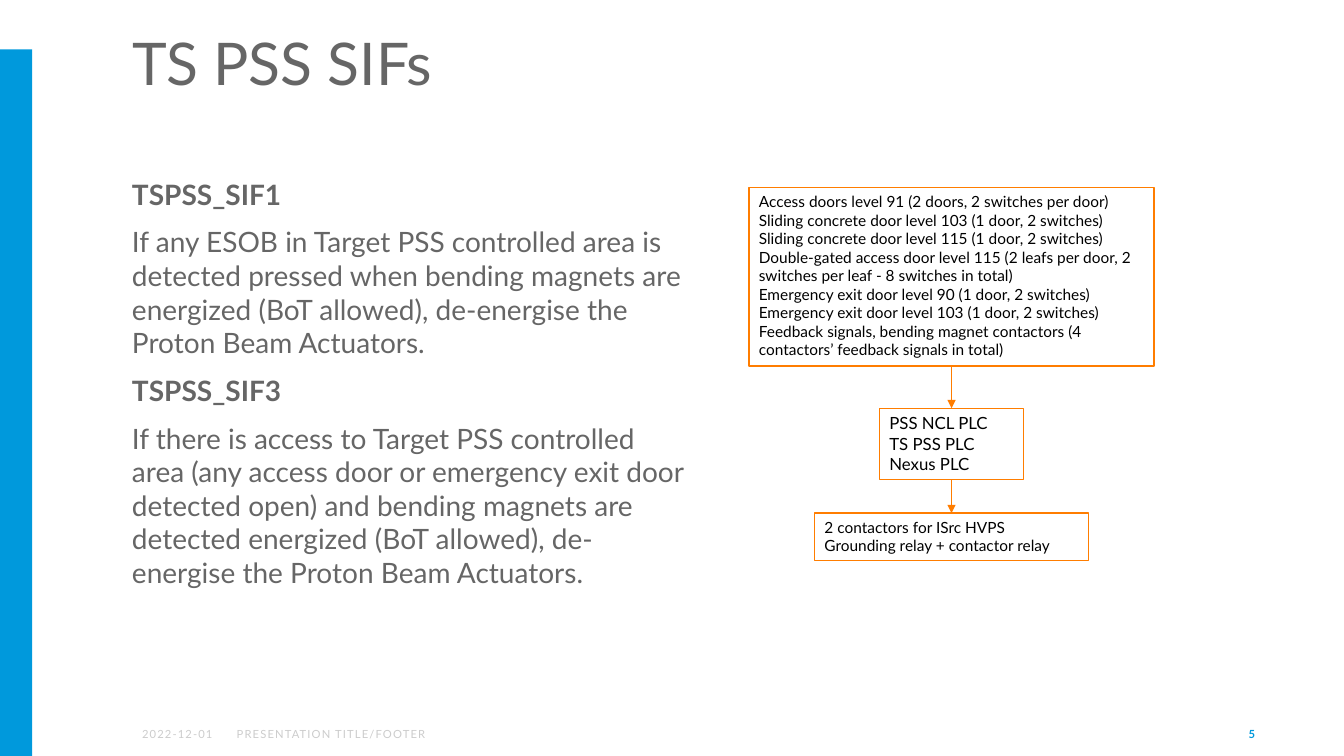
from dataclasses import dataclass

from lxml import etree
from pptx import Presentation
from pptx.dml.color import RGBColor
from pptx.enum.shapes import MSO_CONNECTOR, MSO_SHAPE
from pptx.enum.text import MSO_ANCHOR, MSO_AUTO_SIZE, PP_ALIGN
from pptx.oxml.ns import qn
from pptx.util import Inches, Pt

RECTANGLE = MSO_SHAPE.RECTANGLE
STRAIGHT = MSO_CONNECTOR.STRAIGHT
TOP, MIDDLE = MSO_ANCHOR.TOP, MSO_ANCHOR.MIDDLE
LEFT, RIGHT = PP_ALIGN.LEFT, PP_ALIGN.RIGHT
NO_AUTOFIT = MSO_AUTO_SIZE.NONE

FONT = "Lato"
BLUE, ORANGE, WHITE, BLACK = "0099DC", "FF7D00", "FFFFFF", "000000"
GREY, PALE_GREY = "666666", "CCCCCC"
SLIDE_WIDTH, SLIDE_HEIGHT = Inches(13.33), Inches(7.5)
FLOW_CENTRE = 70.8  # percent of the slide width


@dataclass(frozen=True)
class Area:
    """Position and size in percent of the slide's width and height."""
    left: float
    top: float
    width: float
    height: float

    def emu(self) -> tuple:
        return (across(self.left), down(self.top),
                across(self.width), down(self.height))


@dataclass(frozen=True)
class FlowStep:
    top: float
    width: float
    height: float
    size: int
    lines: tuple


@dataclass(frozen=True)
class FooterItem:
    text: str
    left: float
    width: float
    style: dict


FLOW = (
    FlowStep(24.8, 30.15, 23.6, 11, (
        "Access doors level 91 (2 doors, 2 switches per door)",
        "Sliding concrete door level 103 (1 door, 2 switches)",
        "Sliding concrete door level 115 (1 door, 2 switches)",
        "Double-gated access door level 115 (2 leafs per door, "
        "2 switches per leaf - 8 switches in total)",
        "Emergency exit door level 90 (1 door, 2 switches)",
        "Emergency exit door level 103 (1 door, 2 switches)",
        "Feedback signals, bending magnet contactors "
        "(4 contactors’ feedback signals in total)")),
    FlowStep(54, 10.73, 9.47, 12, ("PSS NCL PLC", "TS PSS PLC", "Nexus PLC")),
    FlowStep(67.87, 20.4, 6.27, 11, (
        "2 contactors for ISrc HVPS", "Grounding relay + contactor relay")),
)

SAFETY_FUNCTIONS = (
    ("TSPSS_SIF1",
     "If any ESOB in Target PSS controlled area is detected pressed when "
     "bending magnets are energized (BoT allowed), de-energise the Proton "
     "Beam Actuators."),
    ("TSPSS_SIF3",
     "If there is access to Target PSS controlled area (any access door or "
     "emergency exit door detected open) and bending magnets are detected "
     "energized (BoT allowed), de-energise the Proton Beam Actuators."),
)

FOOTER = (
    FooterItem("2022-12-01", 9.83, 6.83, {"color": PALE_GREY, "tracking": 0.8}),
    FooterItem("PRESENTATION TITLE/FOOTER", 16.88, 35.4,
               {"color": PALE_GREY, "tracking": 0.8}),
    FooterItem("5", 71.63, 22.5, {"color": BLUE, "bold": True, "align": RIGHT}),
)


def across(percent: float) -> int:
    return round(SLIDE_WIDTH * percent / 100)


def down(percent: float) -> int:
    return round(SLIDE_HEIGHT * percent / 100)


def rgb(value: str) -> RGBColor:
    return RGBColor.from_string(value)


def write(paragraph, text: str, *, size: float, color: str, bold: bool = False,
          align=LEFT, before: float = 0, spacing: float = 1.0,
          tracking: float = 0) -> None:
    paragraph.alignment = align
    paragraph.space_before = Pt(before)
    paragraph.line_spacing = spacing
    run = paragraph.add_run()
    run.text = text
    run.font.name, run.font.size, run.font.bold = FONT, Pt(size), bold
    run.font.color.rgb = rgb(color)
    if tracking:
        run.font._element.set("spc", str(round(tracking * 100)))


def set_frame(frame, anchor=TOP, insets=(0.1, 0.05, 0.1, 0.05)) -> None:
    frame.word_wrap = True
    frame.auto_size = NO_AUTOFIT
    frame.vertical_anchor = anchor
    (frame.margin_left, frame.margin_top,
     frame.margin_right, frame.margin_bottom) = map(Inches, insets)


def next_paragraph(frame, index: int):
    return frame.add_paragraph() if index else frame.paragraphs[0]


def add_panel(slide, area: Area, fill: str, line: str = ""):
    panel = slide.shapes.add_shape(RECTANGLE, *area.emu())
    panel.shadow.inherit = False
    panel.fill.solid()
    panel.fill.fore_color.rgb = rgb(fill)
    if line:
        panel.line.color.rgb = rgb(line)
        panel.line.width = Pt(1)
    else:
        panel.line.fill.background()
    return panel


def add_step(slide, step: FlowStep) -> None:
    area = Area(FLOW_CENTRE - step.width / 2, step.top, step.width, step.height)
    frame = add_panel(slide, area, WHITE, ORANGE).text_frame
    set_frame(frame)
    for index, text in enumerate(step.lines):
        write(next_paragraph(frame, index), text, size=step.size, color=BLACK)


def add_arrow(slide, start: FlowStep, end: FlowStep) -> None:
    centre = across(FLOW_CENTRE)
    arrow = slide.shapes.add_connector(
        STRAIGHT, centre, down(start.top + start.height), centre, down(end.top))
    arrow.line.color.rgb = rgb(ORANGE)
    arrow.line.width = Pt(0.5)
    etree.SubElement(arrow.line._get_or_add_ln(), qn("a:tailEnd"), type="triangle")
    etree.SubElement(arrow._element.spPr, qn("a:effectLst"))


def add_title(slide) -> None:
    title = slide.shapes.title
    title.left, title.top, title.width, title.height = Area(9.08, 3.87, 76.8, 9.6).emu()
    set_frame(title.text_frame, insets=(0.1, 0.05, 0.1, 0.02))
    write(title.text_frame.paragraphs[0], "TS PSS SIFs",
          size=42, color=GREY, spacing=0.9)


def add_safety_functions(slide) -> None:
    frame = slide.shapes.add_textbox(*Area(9, 22.8, 42.3, 64.13).emu()).text_frame
    set_frame(frame, insets=(0.11, 0.05, 0.02, 0.05))
    texts = [text for pair in SAFETY_FUNCTIONS for text in pair]
    for index, text in enumerate(texts):
        write(next_paragraph(frame, index), text, size=20, color=GREY,
              bold=index % 2 == 0, before=10 if index else 0)


def add_footer_item(slide, item: FooterItem) -> None:
    area = Area(item.left, 94.4, item.width, 5.33)
    frame = slide.shapes.add_textbox(*area.emu()).text_frame
    set_frame(frame, anchor=MIDDLE)
    write(frame.paragraphs[0], item.text, size=8, **item.style)


def main() -> None:
    deck = Presentation()
    deck.slide_width, deck.slide_height = SLIDE_WIDTH, SLIDE_HEIGHT
    slide = deck.slides.add_slide(deck.slide_layouts.get_by_name("Title Only"))

    # Side bar, title and text
    add_panel(slide, Area(0, 6.53, 2.4, 93.47), BLUE)
    add_title(slide)
    add_safety_functions(slide)

    # Signal flow from sensors to actuators
    for step in FLOW:
        add_step(slide, step)
    for start, end in zip(FLOW, FLOW[1:]):
        add_arrow(slide, start, end)

    # Footer
    for item in FOOTER:
        add_footer_item(slide, item)

    deck.save("out.pptx")


if __name__ == "__main__":
    main()
